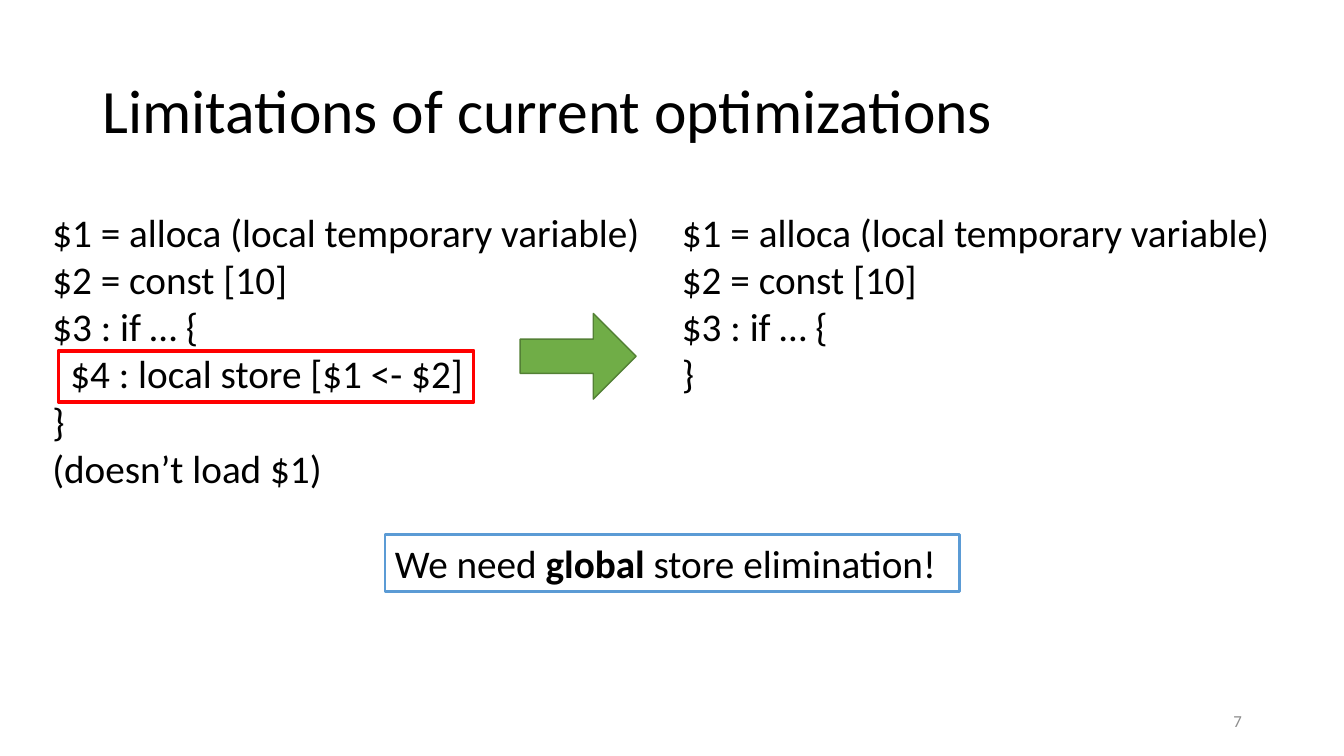
from pptx import Presentation
from pptx.dml.color import RGBColor
from pptx.enum.shapes import MSO_SHAPE as Shape
from pptx.enum.text import MSO_ANCHOR as Anchor, PP_ALIGN as Align
from pptx.util import Inches, Pt

presentation = Presentation()
presentation.slide_width = Inches(13.333)
presentation.slide_height = Inches(7.5)
slide = presentation.slides.add_slide(presentation.slide_layouts[6])


def area(left, top, width, height):
    """Turn percentages of the slide's width and height into lengths."""
    across = presentation.slide_width / 100
    down = presentation.slide_height / 100
    return int(left * across), int(top * down), int(width * across), int(height * down)


def add_text(box, text, size=28, color="000000", align=Align.LEFT,
             anchor=Anchor.TOP, spacing=1.0, bold=(), indented=()):
    """Write one paragraph per line; `bold` lists words, `indented` lists lines."""
    text_box = slide.shapes.add_textbox(*area(*box))
    frame = text_box.text_frame
    frame.word_wrap = True
    frame.vertical_anchor = anchor
    for number, line in enumerate(text.split("\n")):
        paragraph = frame.paragraphs[0] if number == 0 else frame.add_paragraph()
        paragraph.alignment = align
        paragraph.line_spacing = spacing
        if number in indented:
            paragraph._p.get_or_add_pPr().set("marL", str(Inches(0.18)))
        pieces = [line]
        for word in bold:
            before, after = line.split(word)
            pieces = [before, word, after]
        for piece in pieces:
            run = paragraph.add_run()
            run.text = piece
            run.font.name = "Calibri"
            run.font.size = Pt(size)
            run.font.bold = piece in bold
            run.font.color.rgb = RGBColor.from_string(color)
    return text_box


# Title
add_text((6.9, 5.33, 86.25, 19.33), "Limitations of current optimizations",
         size=44, anchor=Anchor.MIDDLE, spacing=0.9)

# Code before and after optimization
opening = "$1 = alloca (local temporary variable)\n$2 = const [10]\n$3 : if … {\n"
before_code = opening + "$4 : local store [$1 <- $2]\n}\n(doesn’t load $1)"
after_code = opening + "}"
line_height, padding = 6.27, 1.45
for left, code, indented in ((3.15, before_code, [3]), (50, after_code, [])):
    height = padding + line_height * len(code.split("\n"))
    add_text((left, 26.93, 46.8, height), code, indented=indented)

# Conclusion
conclusion = add_text((28.65, 70.67, 42.75, 7.6),
                      "We need global store elimination!", bold=["global"])
conclusion.line.color.rgb = RGBColor.from_string("5B9BD5")
conclusion.line.width = Pt(2)

# Slide number
add_text((70.65, 92.67, 22.5, 5.33), "7", size=12, color="8C8C8C",
         align=Align.RIGHT, anchor=Anchor.MIDDLE)

# Frame around the removable store, and the arrow between the versions
for kind, box, fill, line, width in (
    (Shape.RECTANGLE, (4.35, 46.4, 30.9, 6.8), None, "FF0000", 2.5),
    (Shape.RIGHT_ARROW, (38.7, 41.47, 8.63, 11.33), "70AD47", "538035", 1),
):
    shape = slide.shapes.add_shape(kind, *area(*box))
    shape.shadow.inherit = False
    shape.line.color.rgb = RGBColor.from_string(line)
    shape.line.width = Pt(width)
    if fill:
        shape.fill.solid()
        shape.fill.fore_color.rgb = RGBColor.from_string(fill)
        shape.adjustments[0] = 0.4
    else:
        shape.fill.background()

presentation.save("out.pptx")
